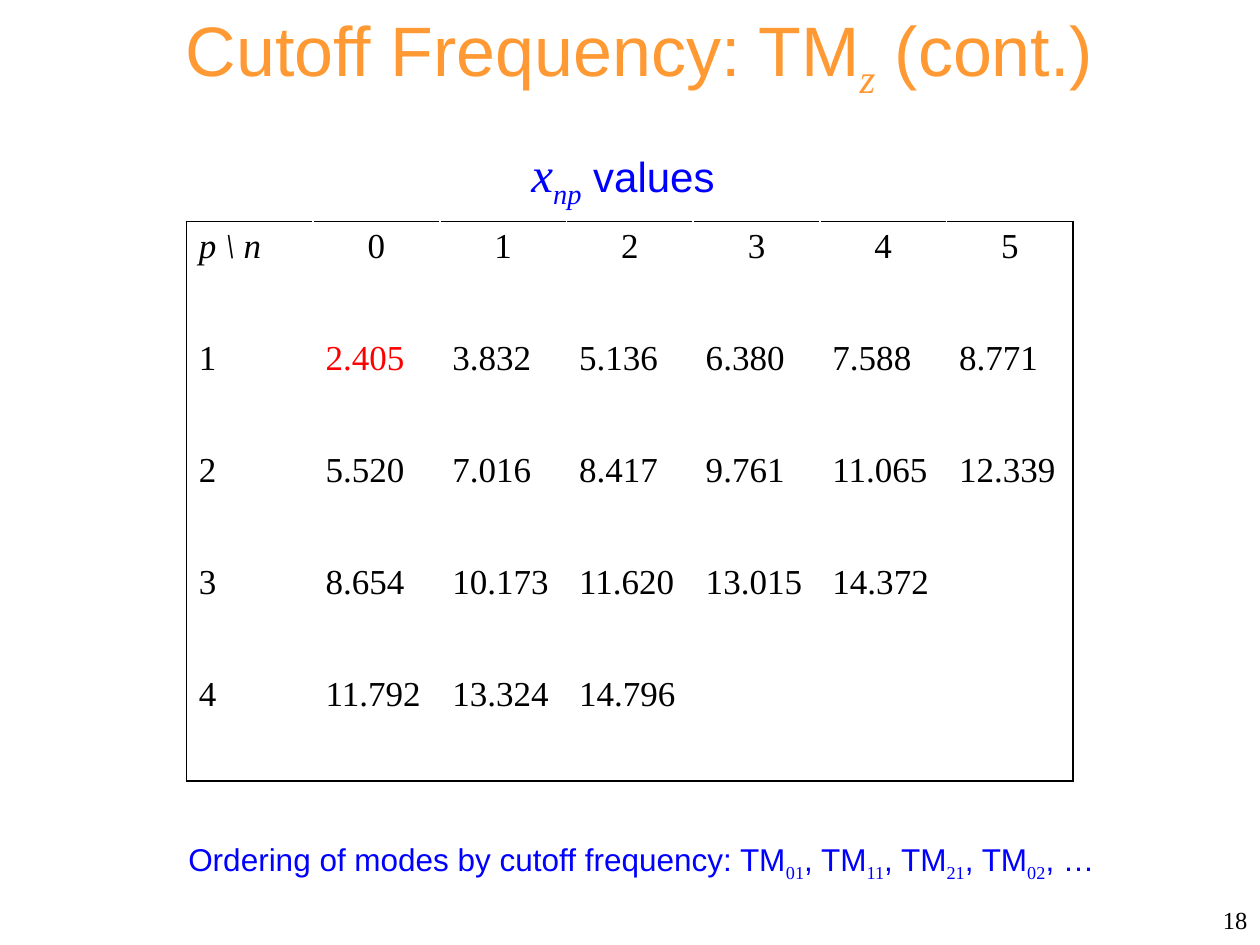
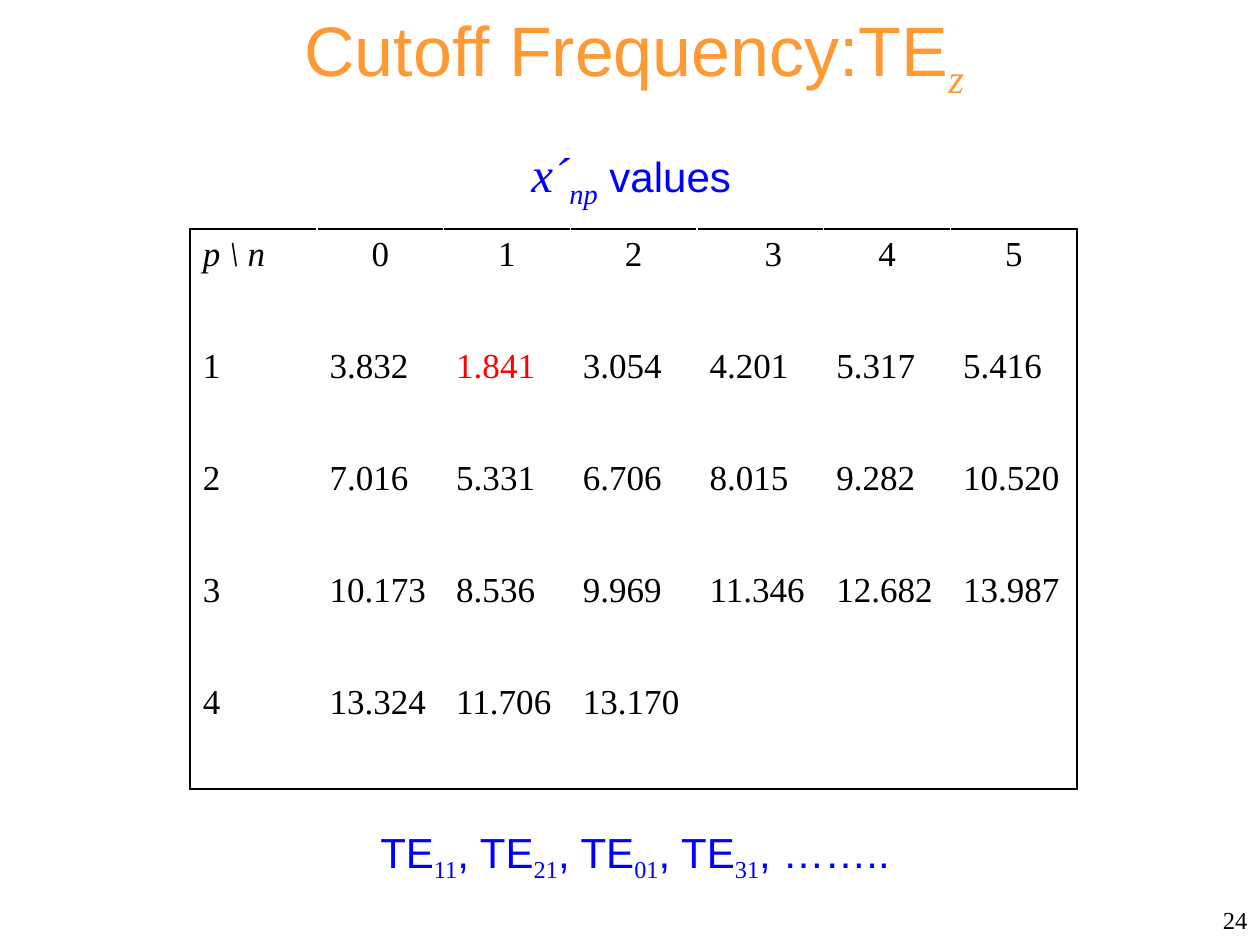
from lxml import etree
from pptx import Presentation
from pptx.dml.color import RGBColor
from pptx.enum.text import MSO_ANCHOR, MSO_AUTO_SIZE, PP_ALIGN
from pptx.oxml.ns import qn
from pptx.util import Pt

LEFT, CENTER, RIGHT = PP_ALIGN.LEFT, PP_ALIGN.CENTER, PP_ALIGN.RIGHT
TOP, MIDDLE = MSO_ANCHOR.TOP, MSO_ANCHOR.MIDDLE
FIXED, GROW = MSO_AUTO_SIZE.NONE, MSO_AUTO_SIZE.SHAPE_TO_FIT_TEXT

ORANGE = RGBColor(0xFF, 0x99, 0x33)
BLUE = RGBColor(0x00, 0x00, 0xFF)
RED = RGBColor(0xFF, 0x00, 0x00)
BLACK = RGBColor(0x00, 0x00, 0x00)
WHITE = RGBColor(0xFF, 0xFF, 0xFF)
SANS, SERIF = "Arial", "Times New Roman"

COLUMN_WIDTH, ROW_HEIGHT = 72.4, 64
MARGIN = 7.2

MODES = [
    dict(
        title="Cutoff Frequency: TM|z| (cont.)", title_left=58.3,
        symbol="x|np", caption_width=121.7,
        table_at=(106.5, 126.5), cutoff="2.405", header_shift={},
        roots=[
            "2.405 3.832 5.136 6.380 7.588 8.771",
            "5.520 7.016 8.417 9.761 11.065 12.339",
            "8.654 10.173 11.620 13.015 14.372",
            "11.792 13.324 14.796",
        ],
        order="Ordering of modes by cutoff frequency: TM|01|, TM|11|, TM|21|, TM|02|, …",
        order_box=(97.2, 476.6, 538.6, 29), order_size=18, order_wrap=False,
        page="18",
    ),
    dict(
        title="Cutoff Frequency:TE|z", title_left=55.4,
        symbol="x´|np", caption_width=135.4,
        table_at=(108.7, 131), cutoff="1.841", header_shift={4: 15},
        roots=[
            "3.832 1.841 3.054 4.201 5.317 5.416",
            "7.016 5.331 6.706 8.015 9.282 10.520",
            "10.173 8.536 9.969 11.346 12.682 13.987",
            "13.324 11.706 13.170",
        ],
        order="TE|11|, TE|21|, TE|01|, TE|31|, ……..",
        order_box=(201.6, 468.7, 322.6, 36), order_size=24, order_wrap=True,
        page="24",
    ),
]


def write(frame, text, size, color, font=SANS, align=LEFT, anchor=TOP,
          fit=None, wrap=True, italic=False, italic_sub=False):
    """Add text to the first paragraph; every second part between bars is a subscript."""
    frame.word_wrap = wrap
    frame.vertical_anchor = anchor
    if fit is not None:
        frame.auto_size = fit
    paragraph = frame.paragraphs[0]
    paragraph.alignment = align
    for index, part in enumerate(text.split("|")):
        if not part:
            continue
        lowered = index % 2 == 1
        run = paragraph.add_run()
        run.text = part
        run.font.size = Pt(size)
        run.font.color.rgb = color
        run.font.name = SERIF if lowered else font
        run.font.italic = italic or (lowered and italic_sub)
        if lowered:
            run.font._element.set("baseline", "-25000")


def draw_borders(cell, colors):
    """Set left, right, top and bottom borders; None leaves a side open."""
    properties = cell._tc.get_or_add_tcPr()
    for side, color in zip("LRTB", colors):
        line = etree.SubElement(properties, qn(f"a:ln{side}"), w=str(Pt(1)))
        if color is None:
            etree.SubElement(line, qn("a:noFill"))
        else:
            fill = etree.SubElement(line, qn("a:solidFill"))
            etree.SubElement(fill, qn("a:srgbClr"), val=str(color))


prs = Presentation()
prs.slide_width, prs.slide_height = Pt(720), Pt(540)
title_only = prs.slide_layouts[5]

for mode in MODES:
    slide = prs.slides.add_slide(title_only)
    shapes = slide.shapes

    # Title
    title = shapes.title
    title.left, title.top = Pt(mode["title_left"]), Pt(0)
    title.width, title.height = Pt(614.2), Pt(55.4)
    write(title.text_frame, mode["title"], size=40, color=ORANGE,
          align=CENTER, fit=FIXED, italic_sub=True)

    # Order of the modes
    order = shapes.add_textbox(*map(Pt, mode["order_box"])).text_frame
    write(order, mode["order"], size=mode["order_size"], color=BLUE,
          align=CENTER, fit=GROW, wrap=mode["order_wrap"])

    # Table of roots: p down, n across
    rows = [["p \\ n", *"012345"]]
    rows += [[str(p), *line.split()] for p, line in enumerate(mode["roots"], 1)]
    row_count, column_count = len(rows), len(rows[0])
    last_row, last_column = row_count - 1, column_count - 1
    left, top = mode["table_at"]
    roots = shapes.add_table(row_count, column_count, Pt(left), Pt(top),
                             Pt(COLUMN_WIDTH * column_count),
                             Pt(ROW_HEIGHT * row_count)).table
    roots.first_row = roots.horz_banding = False
    for column in roots.columns:
        column.width = Pt(COLUMN_WIDTH)
    for r, values in enumerate(rows):
        roots.rows[r].height = Pt(ROW_HEIGHT)
        for c in range(column_count):
            cell = roots.cell(r, c)
            draw_borders(cell, (BLACK if c == 0 else WHITE,
                                BLACK if c == last_column else WHITE,
                                BLACK if r == 0 else None,
                                BLACK if r == last_row else None))
            cell.fill.background()
            if c < len(values):
                write(cell.text_frame, values[c], size=20, font=SERIF,
                      color=RED if values[c] == mode["cutoff"] else BLACK,
                      align=CENTER if r == 0 and c > 0 else LEFT,
                      italic=r == c == 0)
    for c, shift in mode["header_shift"].items():
        roots.cell(0, c).margin_left = Pt(MARGIN + shift)

    # Table caption
    caption = shapes.add_textbox(Pt(296.6), Pt(78.5), Pt(mode["caption_width"]),
                                 Pt(41)).text_frame
    write(caption, mode["symbol"], size=28, color=BLUE, font=SERIF,
          fit=GROW, italic=True)
    write(caption, " values", size=24, color=BLUE)

    # Page number
    page = shapes.add_textbox(Pt(552.2), Pt(511.2), Pt(167.8), Pt(28.8)).text_frame
    write(page, mode["page"], size=14, color=BLACK, font=SERIF,
          align=RIGHT, anchor=MIDDLE, fit=FIXED)

prs.save("out.pptx")
